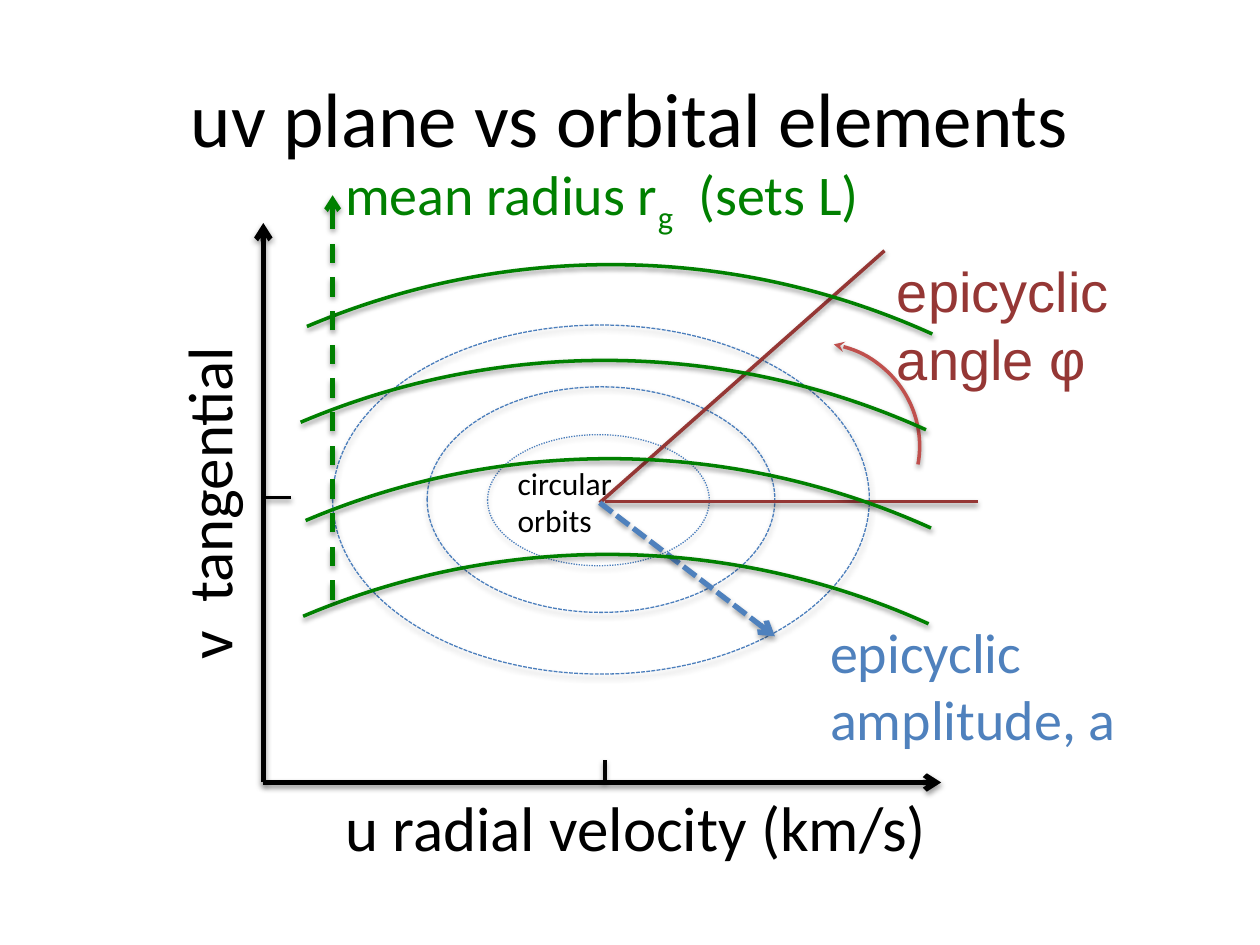
import pptx
import pptx.dml.color
import pptx.enum.dml
import pptx.enum.shapes
import pptx.enum.text
import pptx.oxml
import pptx.oxml.ns
import pptx.util
from pptx.util import Inches

SHAPES = pptx.enum.shapes.MSO_SHAPE
DASHES = pptx.enum.dml.MSO_LINE
ALIGN = pptx.enum.text.PP_ALIGN
ANCHOR = pptx.enum.text.MSO_ANCHOR

BLACK = "000000"
GREEN = "008000"
DARK_RED = "953735"
RED = "C0504D"
BLUE = "4F81BD"
ORBIT_BLUE = "4B7EBC"


def color(hex_string):
    return pptx.dml.color.RGBColor.from_string(hex_string)


class Diagram:
    font_name = "Calibri"

    def __init__(self, slide):
        self.slide = slide

    def style_line(self, shape, line_color, width, dash=None, head=None, tail=None):
        line = shape.line
        line.color.rgb = color(line_color)
        line.width = pptx.util.Pt(width)
        if dash is not None:
            line.dash_style = dash
        outline = line._get_or_add_ln()
        for tag, arrowhead in (("a:headEnd", head), ("a:tailEnd", tail)):
            if arrowhead:
                end = pptx.oxml.parse_xml(f"<{tag} {pptx.oxml.ns.nsdecls('a')}/>")
                end.set("type", arrowhead)
                outline.append(end)

    def add_shadow(self, shape, distance, opacity):
        """Append a soft downward shadow; distance in points, opacity in percent."""
        shape._element.spPr.append(pptx.oxml.parse_xml(
            f"<a:effectLst {pptx.oxml.ns.nsdecls('a')}>"
            f'<a:outerShdw blurRad="{pptx.util.Pt(3.1)}" dist="{pptx.util.Pt(distance)}"'
            ' dir="5400000" rotWithShape="0">'
            f'<a:srgbClr val="{BLACK}"><a:alpha val="{opacity * 1000}"/></a:srgbClr>'
            "</a:outerShdw></a:effectLst>"))

    def line(self, start, end, line_color, width, **style):
        connector = self.slide.shapes.add_connector(
            pptx.enum.shapes.MSO_CONNECTOR.STRAIGHT,
            *(Inches(value) for value in (*start, *end)))
        self.style_line(connector, line_color, width, **style)
        self.add_shadow(connector, 1.6, 38)

    def outline(self, kind, box, line_color, width, shadow, **style):
        shape = self.slide.shapes.add_shape(kind, *(Inches(value) for value in box))
        shape.fill.background()
        self.style_line(shape, line_color, width, **style)
        self.add_shadow(shape, *shadow)
        return shape

    def ellipse(self, box, dash):
        self.outline(SHAPES.OVAL, box, ORBIT_BLUE, 0.75, (1.8, 35), dash=dash)

    def arc(self, box, line_color, rotation, angles=(270, 0), head=None):
        """Draw an arc between two angles in degrees, then rotate it."""
        shape = self.outline(SHAPES.ARC, box, line_color, 2, (1.6, 38), head=head)
        shape.rotation = rotation
        for index, angle in enumerate(angles):
            shape.adjustments[index] = angle * 0.6

    def text(self, box, content, size, text_color=BLACK, font_name=None,
             align=ALIGN.LEFT, anchor=ANCHOR.TOP, rotation=0, subscript=None):
        text_box = self.slide.shapes.add_textbox(*(Inches(value) for value in box))
        text_box.rotation = rotation
        frame = text_box.text_frame
        frame.word_wrap = True
        frame.vertical_anchor = anchor
        frame.text = content
        if subscript:
            lowered, following = subscript
            run = frame.paragraphs[-1].add_run()
            run.text = lowered
            run.font._element.set("baseline", "-25000")
            frame.paragraphs[-1].add_run().text = following
        for paragraph in frame.paragraphs:
            paragraph.alignment = align
            for run in paragraph.runs:
                run.font.name = font_name or self.font_name
                run.font.size = pptx.util.Pt(size)
                run.font.color.rgb = color(text_color)


def main():
    presentation = pptx.Presentation()
    presentation.slide_width = Inches(10)
    presentation.slide_height = Inches(7.5)
    diagram = Diagram(presentation.slides.add_slide(presentation.slide_layouts[6]))

    diagram.text((0.5, 0.3, 9, 1.25), "uv plane vs orbital elements", 44,
                 align=ALIGN.CENTER, anchor=ANCHOR.MIDDLE)

    # Orbits of equal epicyclic amplitude
    diagram.ellipse((3.39, 3.07, 2.76, 1.79), DASHES.SQUARE_DOT)
    diagram.ellipse((3.87, 3.45, 1.76, 1.04), DASHES.ROUND_DOT)
    diagram.ellipse((2.64, 2.58, 4.26, 2.77), DASHES.SQUARE_DOT)

    # Epicyclic angle and amplitude
    center = (4.76, 3.99)
    diagram.line(center, (7.02, 1.99), DARK_RED, 2)
    diagram.line((4.8, 3.98), (7.76, 3.98), DARK_RED, 2)
    diagram.text((7.02, 1.99, 2.53, 1.18), "epicyclic angle φ", 32, DARK_RED, "Arial")
    diagram.arc((5.64, 2.72, 1.66, 1.63), RED, 10.5, head="stealth")
    diagram.line(center, (6.15, 5.05), BLUE, 3, dash=DASHES.SQUARE_DOT, tail="arrow")
    diagram.text((6.49, 4.85, 2.53, 1.18), "epicyclic amplitude, a", 32, BLUE)

    # Curves of equal mean radius
    diameter = 12.36
    for left, top in ((-1.38, 2.86), (-1.33, 2.1), (-1.34, 3.64), (-1.36, 4.4)):
        diagram.arc((left, top, diameter, diameter), GREEN, 315, (292.01, 339.37))
    diagram.line((2.64, 4.76), (2.64, 1.55), GREEN, 2.75, dash=DASHES.DASH, tail="arrow")
    diagram.text((2.64, 1.22, 6.55, 0.64), "mean radius r", 32, GREEN,
                 subscript=("g", "  (sets L)"))
    diagram.text((4.01, 3.63, 1.62, 0.71), "circular\norbits", 18)

    # Axes with their labels and ticks
    origin = (2.09, 6.21)
    for axis_end in ((7.47, 6.21), (2.09, 1.77)):
        diagram.line(origin, axis_end, BLACK, 3, tail="arrow")
    diagram.text((2.64, 6.21, 5.32, 0.71), "u radial velocity (km/s)", 36)
    diagram.text((-0.03, 3.3, 3.36, 0.71), "v  tangential", 36, rotation=270)
    diagram.line((4.8, 6.21), (4.8, 6.03), BLACK, 2)
    diagram.line((2.11, 3.95), (2.31, 3.95), BLACK, 2)

    presentation.save("out.pptx")


if __name__ == "__main__":
    main()
